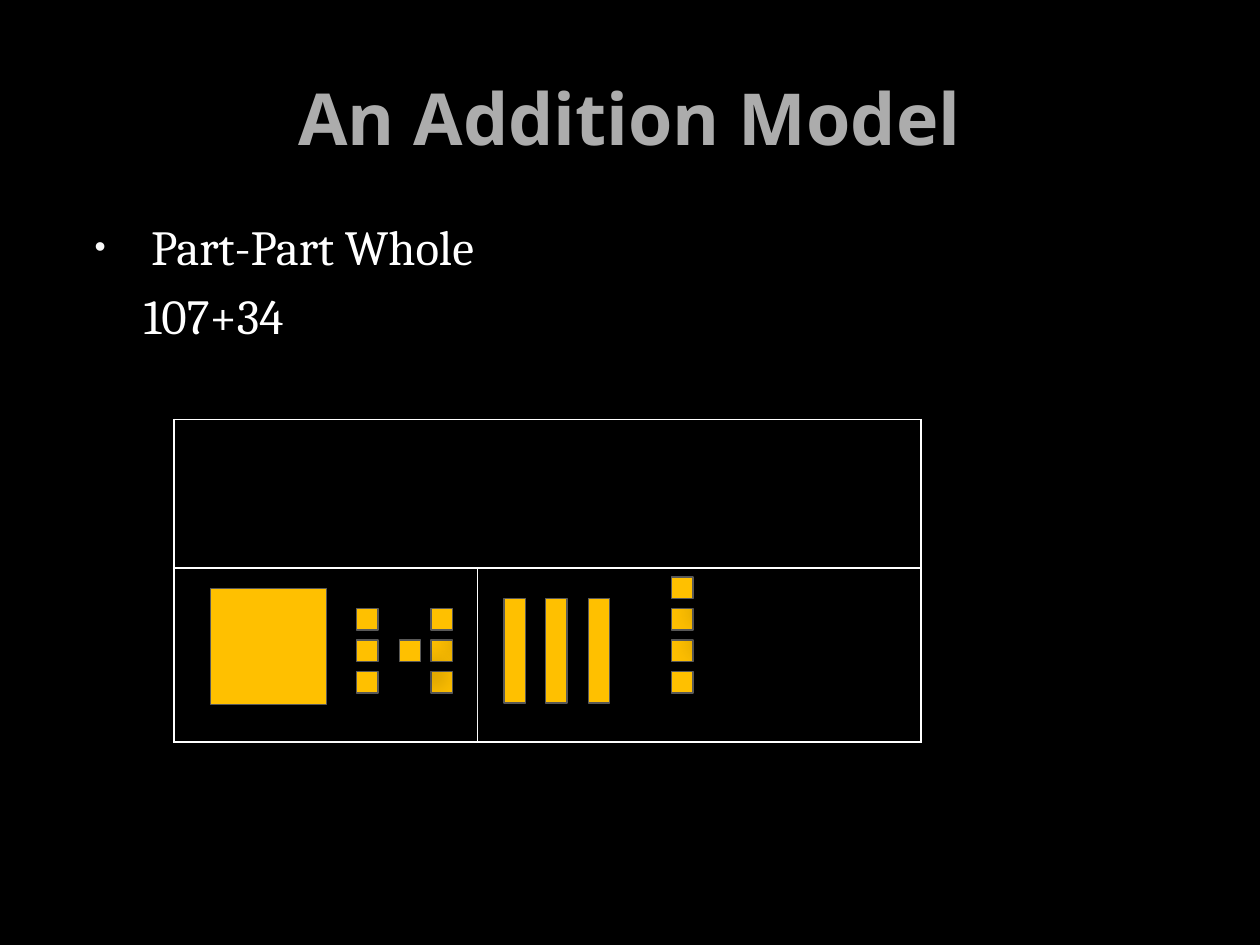
from lxml.etree import SubElement
from pptx import Presentation
from pptx.dml.color import RGBColor
from pptx.enum.shapes import MSO_SHAPE
from pptx.enum.text import MSO_ANCHOR, MSO_AUTO_SIZE, PP_ALIGN
from pptx.oxml import parse_xml
from pptx.oxml.ns import nsdecls, qn
from pptx.util import Inches, Pt

COLORS = {
    "background": "000000",
    "title": "ACACAC",
    "text": "FFFFFF",
    "bullet": "F9F9F9",
    "block": "FFC000",
    "outline": "595959",
    "shadow": "000000",
}
UNIT = 0.17
ROD_HEIGHT = 0.83
FLAT_SIZE = 0.92


def color(name):
    return RGBColor.from_string(COLORS[name])


def place(shape, left, top, width, height):
    shape.left, shape.top = Inches(left), Inches(top)
    shape.width, shape.height = Inches(width), Inches(height)


def add_run(paragraph, text, font_name, size, color_name, bold=False):
    run = paragraph.add_run()
    run.text = text
    run.font.name = font_name
    run.font.size = Pt(size)
    run.font.bold = bold
    run.font.color.rgb = color(color_name)


def set_indent(paragraph, margin, indent):
    properties = paragraph._p.get_or_add_pPr()
    properties.set("marL", str(Inches(margin)))
    properties.set("indent", str(Inches(indent)))
    return properties


def fill_title(title):
    place(title, 0.5, 0.3, 9, 1.25)
    frame = title.text_frame
    frame.vertical_anchor = MSO_ANCHOR.MIDDLE
    paragraph = frame.paragraphs[0]
    paragraph.alignment = PP_ALIGN.CENTER
    add_run(paragraph, "An Addition Model", "Open Sans", 41, "title", True)


def fill_body(body):
    place(body, 0.5, 1.67, 9, 5.15)
    frame = body.text_frame
    frame.auto_size = MSO_AUTO_SIZE.NONE

    heading = frame.paragraphs[0]
    properties = set_indent(heading, 0.6, -0.45)
    bullet_color = SubElement(properties, qn("a:buClr"))
    SubElement(bullet_color, qn("a:srgbClr"), val=COLORS["bullet"])
    SubElement(properties, qn("a:buSzPct"), val="65000")
    SubElement(properties, qn("a:buChar"), char="•")
    add_run(heading, "Part-Part Whole", "Cambria", 28, "text")

    problem = frame.add_paragraph()
    SubElement(set_indent(problem, 0.04, 0), qn("a:buNone"))
    add_run(problem, "\t107+34", "Cambria", 28, "text")


def style_cell(cell):
    properties = cell._tc.get_or_add_tcPr()
    for side in ("lnL", "lnR", "lnT", "lnB"):
        line = SubElement(properties, qn(f"a:{side}"), w=str(Pt(1)))
        fill = SubElement(line, qn("a:solidFill"))
        SubElement(fill, qn("a:srgbClr"), val=COLORS["text"])
    cell.fill.background()


def add_model_table(slide):
    widths, heights = (2.41, 3.52), (1.18, 1.38)
    frame = slide.shapes.add_table(
        2, 2, Inches(1.38), Inches(3.33),
        Inches(sum(widths)), Inches(sum(heights)),
    )
    table = frame.table
    for column, width in zip(table.columns, widths):
        column.width = Inches(width)
    for row, height in zip(table.rows, heights):
        row.height = Inches(height)
    for cell in table.iter_cells():
        style_cell(cell)
    table.cell(0, 0).merge(table.cell(0, 1))


def add_block(slide, left, top, width=UNIT, height=UNIT):
    block = slide.shapes.add_shape(
        MSO_SHAPE.RECTANGLE,
        Inches(left), Inches(top), Inches(width), Inches(height),
    )
    block.fill.solid()
    block.fill.fore_color.rgb = color("block")
    block.line.color.rgb = color("outline")
    block.line.width = Pt(0.75)
    block._element.spPr.append(parse_xml(
        f'<a:effectLst {nsdecls("a")}>'
        f'<a:outerShdw blurRad="{Pt(15)}" dist="{Pt(18)}" dir="2700000" '
        f'algn="tl" rotWithShape="0"><a:srgbClr val="{COLORS["shadow"]}">'
        '<a:alpha val="26000"/></a:srgbClr></a:outerShdw></a:effectLst>'
    ))


def add_blocks(slide):
    add_block(slide, 1.67, 4.67, FLAT_SIZE, FLAT_SIZE)
    for left in (4, 4.33, 4.67):
        add_block(slide, left, 4.75, UNIT, ROD_HEIGHT)

    upper, middle, lower = 4.83, 5.08, 5.33
    unit_columns = (
        (2.83, (upper, middle)),
        (3.42, (middle, upper)),
        (2.83, (lower,)),
        (3.42, (lower,)),
        (3.17, (middle,)),
        (5.33, (middle, upper, lower, 4.58)),
    )
    for left, tops in unit_columns:
        for top in tops:
            add_block(slide, left, top)


def main():
    presentation = Presentation()
    presentation.slide_width = Inches(10)
    presentation.slide_height = Inches(7.5)
    slide = presentation.slides.add_slide(presentation.slide_layouts[1])
    slide.background.fill.solid()
    slide.background.fill.fore_color.rgb = color("background")
    fill_title(slide.shapes.title)
    fill_body(slide.placeholders[1])
    add_model_table(slide)
    add_blocks(slide)
    presentation.save("out.pptx")


if __name__ == "__main__":
    main()
